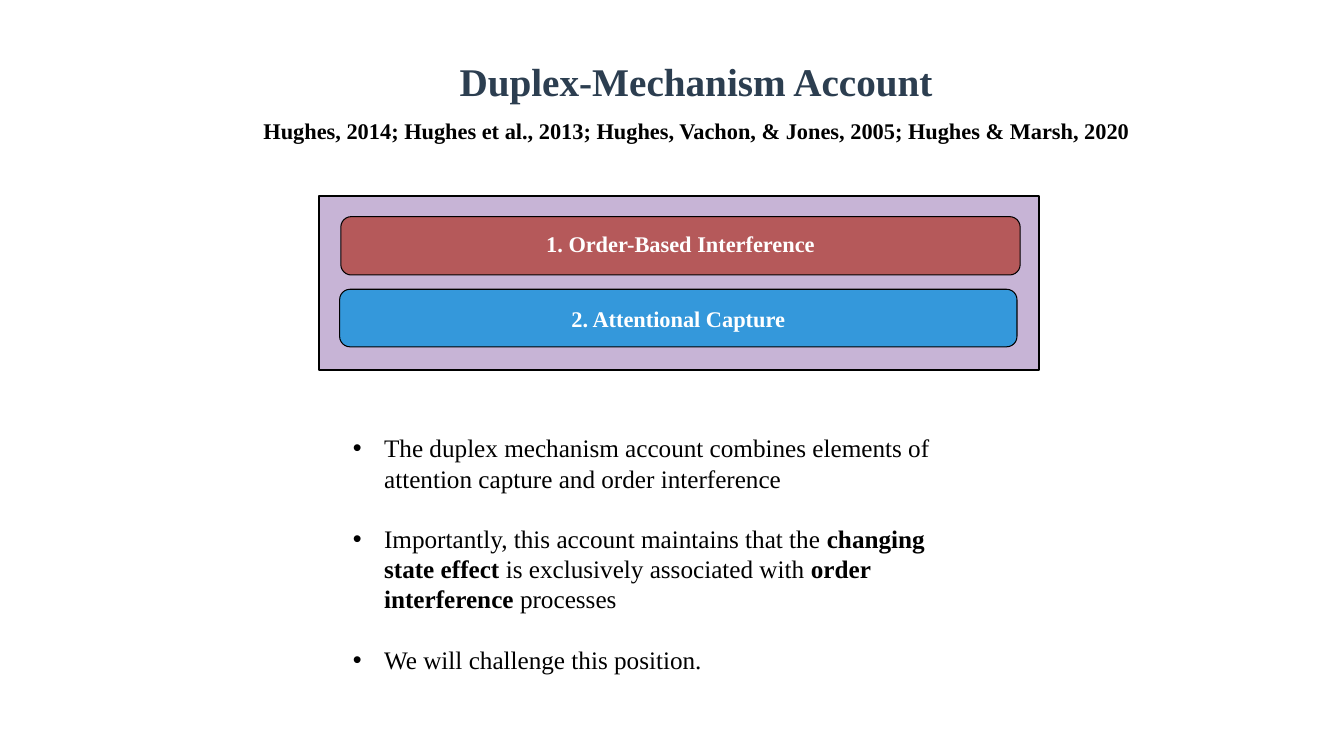
from dataclasses import dataclass

from lxml.etree import SubElement
from pptx import Presentation
from pptx.dml.color import RGBColor as RGB
from pptx.enum.shapes import MSO_SHAPE as SHAPE
from pptx.enum.text import MSO_ANCHOR as ANCHOR, MSO_AUTO_SIZE as AUTOSIZE, PP_ALIGN as ALIGN
from pptx.oxml.ns import qn
from pptx.util import Cm, Pt


@dataclass(frozen=True)
class Theme:
    font: str = "Times New Roman"
    heading: RGB = RGB(0x2C, 0x3E, 0x50)
    ink: RGB = RGB(0, 0, 0)
    white: RGB = RGB(0xFF, 0xFF, 0xFF)
    panel: RGB = RGB(0xC7, 0xB4, 0xD6)
    order: RGB = RGB(0xB5, 0x59, 0x5A)
    capture: RGB = RGB(0x34, 0x98, 0xDB)
    title_size: Pt = Pt(28)
    body_size: Pt = Pt(18)
    label_size: Pt = Pt(16)


theme = Theme()


def prepare_frame(holder, anchor=ANCHOR.TOP):
    frame = holder.text_frame
    frame.word_wrap = True
    frame.auto_size = AUTOSIZE.NONE
    frame.vertical_anchor = anchor
    frame.margin_left = frame.margin_top = frame.margin_right = frame.margin_bottom = 0
    return frame


def add_run(paragraph, text, size, color, bold):
    run = paragraph.add_run()
    run.text = text
    run.font.name = theme.font
    run.font.size = size
    run.font.color.rgb = color
    run.font.bold = bold


deck = Presentation()
deck.slide_width, deck.slide_height = Cm(33.87), Cm(19.05)
slide = deck.slides.add_slide(deck.slide_layouts.get_by_name("Title and Content"))
title, claims = slide.placeholders

# Title and citations
title.left, title.top, title.width, title.height = Cm(8.89), Cm(1.78), Cm(17.3), Cm(0.84)
citations = slide.shapes.add_textbox(Cm(2.08), Cm(2.95), Cm(30.94), Cm(0.69))
headings = [
    (title, "Duplex-Mechanism Account", theme.title_size, theme.heading, Pt(24)),
    (citations, "Hughes, 2014; Hughes et al., 2013; Hughes, Vachon, & Jones, 2005; Hughes & Marsh, 2020",
     theme.label_size, theme.ink, Pt(19.6)),
]
for heading, text, size, color, line_height in headings:
    line = prepare_frame(heading).paragraphs[0]
    line.alignment = ALIGN.CENTER
    line.line_spacing = line_height
    add_run(line, text, size, color, True)

# Panel with the two mechanisms
mechanisms = slide.shapes.add_group_shape()
panel = mechanisms.shapes.add_shape(SHAPE.RECTANGLE, Cm(8.05), Cm(4.95), Cm(18.14), Cm(4.37))
panel.shadow.inherit = False
panel.fill.solid()
panel.fill.fore_color.rgb = theme.panel
panel.line.color.rgb = theme.ink
panel.line.width = Pt(1.5)

bands = [
    ("1. Order-Based Interference", theme.order, 8.59, 5.46, 17.12, 1.47, 0.15),
    ("2. Attentional Capture", theme.capture, 8.56, 7.29, 17.07, 1.45, 0),
]
for label, color, left, top, width, height, lift in bands:
    band = mechanisms.shapes.add_shape(
        SHAPE.ROUNDED_RECTANGLE, Cm(left), Cm(top), Cm(width), Cm(height))
    band.adjustments[0] = 0.18
    band.shadow.inherit = False
    band.fill.solid()
    band.fill.fore_color.rgb = color
    band.line.color.rgb = theme.ink
    band.line.width = Pt(0.75)
    frame = prepare_frame(band, ANCHOR.MIDDLE)
    frame.margin_bottom = Cm(lift)
    line = frame.paragraphs[0]
    line.alignment = ALIGN.CENTER
    line.line_spacing = Pt(20)
    add_run(line, label, theme.label_size, theme.white, True)

# Bulleted claims: each run is (text, bold)
claims.left, claims.top, claims.width, claims.height = Cm(8.89), Cm(10.9), Cm(15.52), Cm(4.22)
claim_runs = [
    [("The duplex mechanism account combines elements of attention capture and order interference", False)],
    [("Importantly, this account maintains that the ", False), ("changing state effect", True),
     (" is exclusively associated with ", False), ("order interference", True), (" processes", False)],
    [("We will challenge this position.", False)],
]
frame = prepare_frame(claims)
for index, runs in enumerate(claim_runs):
    claim = frame.add_paragraph() if index else frame.paragraphs[0]
    claim.alignment = ALIGN.LEFT
    claim.line_spacing = Pt(21.6)
    claim.space_before = Pt(0)
    claim.space_after = Pt(21.6)
    properties = claim._p.get_or_add_pPr()
    properties.set("marL", str(Cm(0.79)))
    properties.set("indent", str(-Cm(0.79)))
    SubElement(properties, qn("a:buFont")).set("typeface", "Arial")
    SubElement(properties, qn("a:buChar")).set("char", "•")
    for text, bold in runs:
        add_run(claim, text, theme.body_size, theme.ink, bold)

deck.save("out.pptx")
